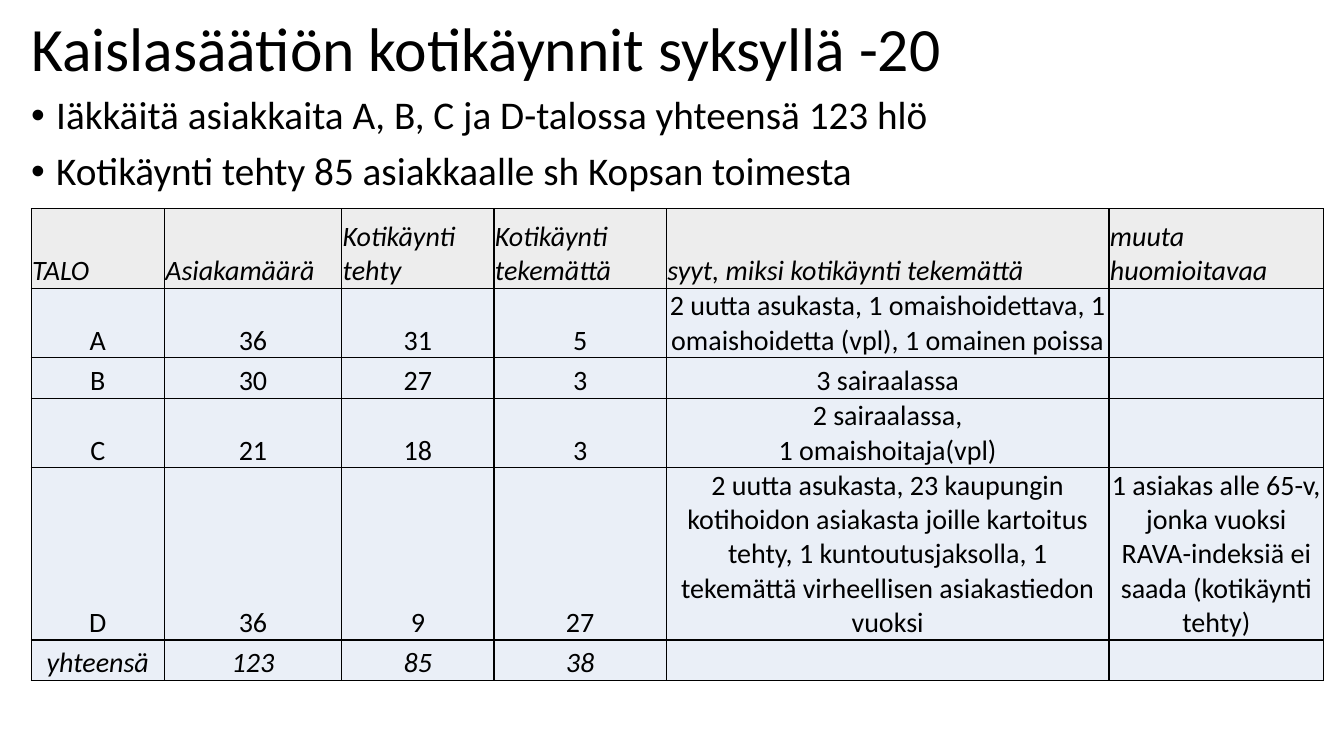
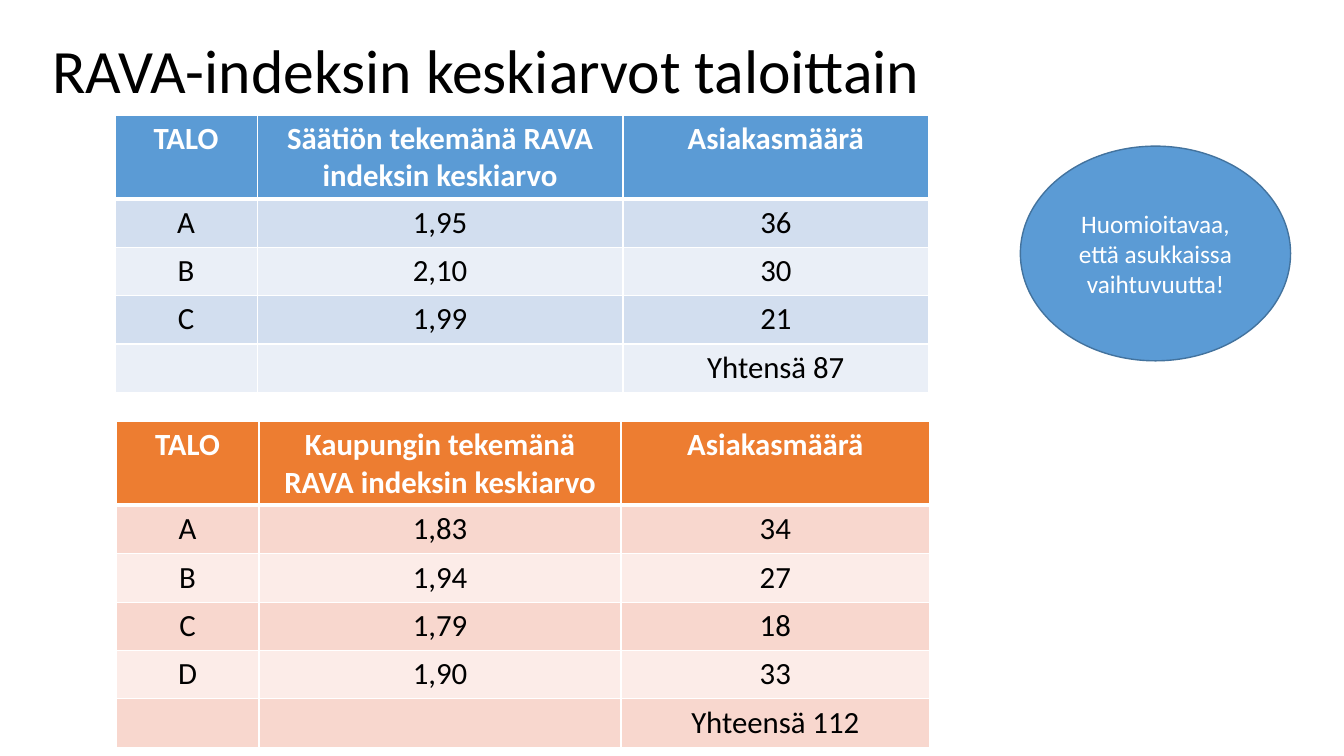
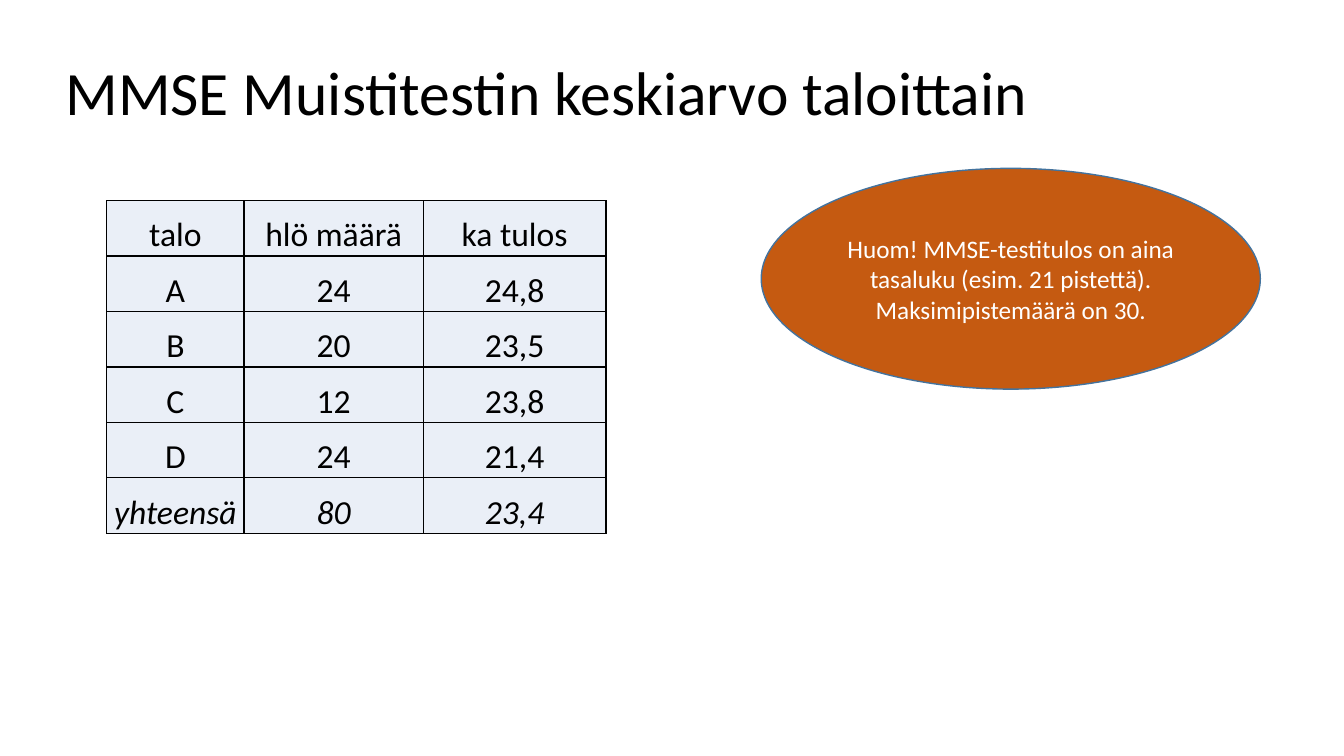
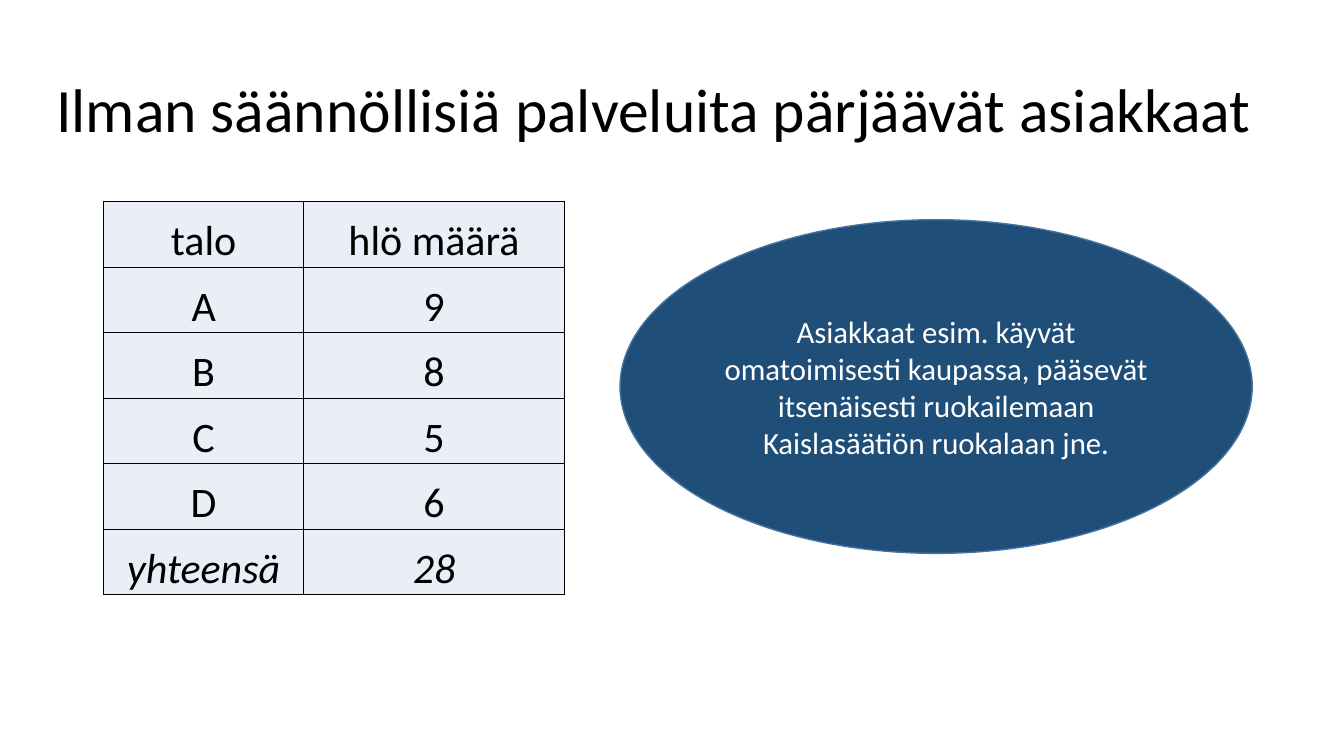
from lxml.etree import SubElement
from pptx import Presentation
from pptx.dml.color import RGBColor
from pptx.enum.shapes import MSO_SHAPE
from pptx.enum.text import MSO_ANCHOR, PP_ALIGN
from pptx.oxml import parse_xml
from pptx.oxml.ns import nsdecls, qn
from pptx.util import Inches, Pt

FONT = "Calibri"
BLACK, WHITE = "000000", "FFFFFF"
BLUE, PALE_BLUE, LIGHT_BLUE = "5B9BD5", "D2DEEF", "EAEFF7"
ORANGE, PALE_ORANGE, LIGHT_ORANGE = "ED7D31", "F8D7CE", "FCECE8"
RUST, NAVY, OUTLINE, GRAY = "C55A11", "1F4E79", "43739E", "EDEDED"


def rgb(value):
    """Turn a hex string into a colour."""
    return RGBColor.from_string(value)


def add_run(p, text, size, color=BLACK, bold=False, italic=False):
    """Add one formatted run to a paragraph."""
    r = p.add_run()
    r.text = text
    r.font.name = FONT
    r.font.size = Pt(size)
    r.font.color.rgb = rgb(color)
    r.font.bold = bold
    r.font.italic = italic


def add_textbox(s, box):
    """Add a wrapping text box and return its text frame."""
    tf = s.shapes.add_textbox(*map(Inches, box)).text_frame
    tf.word_wrap = True
    return tf


def add_title(s, text, left, top, width, height=1.45):
    """Add the slide title."""
    tf = add_textbox(s, (left, top, width, height))
    tf.vertical_anchor = MSO_ANCHOR.MIDDLE
    p = tf.paragraphs[0]
    p.line_spacing = 0.9
    add_run(p, text, 44)


def add_bullets(s, items, box):
    """Add a bulleted list."""
    tf = add_textbox(s, box)
    for i, item in enumerate(items):
        p = tf.add_paragraph() if i else tf.paragraphs[0]
        p.line_spacing = 0.9
        if i:
            p.space_before = Pt(10)
        pPr = p._p.get_or_add_pPr()
        pPr.set("marL", str(Inches(0.25)))
        pPr.set("indent", str(-Inches(0.25)))
        SubElement(pPr, qn("a:buFont"), typeface="Arial")
        SubElement(pPr, qn("a:buChar"), char="•")
        add_run(p, item, 28)


def add_ellipse(s, text, box, fill, size=18):
    """Add a filled ellipse holding a remark."""
    sp = s.shapes.add_shape(MSO_SHAPE.OVAL, *map(Inches, box))
    sp.shadow.inherit = False
    sp.fill.solid()
    sp.fill.fore_color.rgb = rgb(fill)
    sp.line.color.rgb = rgb(OUTLINE)
    sp.line.width = Pt(1)
    tf = sp.text_frame
    tf.word_wrap = True
    tf.vertical_anchor = MSO_ANCHOR.MIDDLE
    p = tf.paragraphs[0]
    p.alignment = PP_ALIGN.CENTER
    add_run(p, text, size, WHITE)


def set_borders(cell, color, bottom=1):
    """Draw the four borders of a cell."""
    tcPr = cell._tc.get_or_add_tcPr()
    widths = {"lnL": 1, "lnR": 1, "lnT": 1, "lnB": bottom}
    for i, (tag, width) in enumerate(widths.items()):
        tcPr.insert(i, parse_xml(
            f'<a:{tag} {nsdecls("a")} w="{Pt(width)}"><a:solidFill>'
            f'<a:srgbClr val="{color}"/></a:solidFill></a:{tag}>'))


def fill_cell(cell, text, fill, align=PP_ALIGN.CENTER, **font):
    """Set the fill and text of a cell, one paragraph a line."""
    cell.fill.solid()
    cell.fill.fore_color.rgb = rgb(fill)
    if not text:
        return
    tf = cell.text_frame
    for i, line in enumerate(text.split("\n")):
        p = tf.add_paragraph() if i else tf.paragraphs[0]
        p.alignment = align
        add_run(p, line, **font)


def add_grid(s, left, top, widths, heights):
    """Add an unstyled table with the given columns and rows."""
    sizes = map(Inches, (left, top, sum(widths), sum(heights)))
    table = s.shapes.add_table(len(heights), len(widths), *sizes).table
    table.first_row = table.horz_banding = False
    for col, width in zip(table.columns, widths):
        col.width = Inches(width)
    for row, height in zip(table.rows, heights):
        row.height = Inches(height)
    return table


def add_ruled_table(s, rows, left, top, widths, heights, size, has_header=False):
    """Add a black-ruled table whose last row is an italic total."""
    table = add_grid(s, left, top, widths, heights)
    for i, row in enumerate(rows):
        header = has_header and i == 0
        for j, text in enumerate(row):
            cell = table.cell(i, j)
            cell.margin_left = cell.margin_right = cell.margin_top = Inches(0.01)
            cell.margin_bottom = 0
            cell.vertical_anchor = MSO_ANCHOR.BOTTOM
            fill_cell(cell, text, GRAY if header else LIGHT_BLUE,
                      PP_ALIGN.LEFT if header else PP_ALIGN.CENTER,
                      size=size, italic=header or i == len(rows) - 1)
            set_borders(cell, BLACK)


def add_banded_table(s, rows, left, top, widths, head, bands):
    """Add a table with a coloured header and alternating bands."""
    heights = [0.82] + [0.48] * (len(rows) - 1)
    table = add_grid(s, left, top, widths, heights)
    for i, row in enumerate(rows):
        header = i == 0
        for j, text in enumerate(row):
            cell = table.cell(i, j)
            fill_cell(cell, text, head if header else bands[(i - 1) % 2],
                      size=22, color=WHITE if header else BLACK, bold=header)
            set_borders(cell, WHITE, 3 if header else 1)


def build_visits(s):
    """Build the slide on home visits."""
    add_title(s, "Kaislasäätiön kotikäynnit syksyllä -20", 0.21, 0, 12.97, 1.02)
    add_bullets(s, ["Iäkkäitä asiakkaita A, B, C ja D-talossa yhteensä 123 hlö",
                    "Kotikäynti tehty 85 asiakkaalle sh Kopsan toimesta"],
                (0.21, 0.9, 12.04, 1.15))
    rows = [
        ("TALO", "Asiakamäärä", "Kotikäynti tehty", "Kotikäynti tekemättä",
         "syyt, miksi kotikäynti tekemättä", "muuta huomioitavaa"),
        ("A", "36", "31", "5", "2 uutta asukasta, 1 omaishoidettava, "
         "1 omaishoidetta (vpl), 1 omainen poissa", ""),
        ("B", "30", "27", "3", "3 sairaalassa", ""),
        ("C", "21", "18", "3", "2 sairaalassa,\n1 omaishoitaja(vpl)", ""),
        ("D", "36", "9", "27", "2 uutta asukasta, 23 kaupungin kotihoidon "
         "asiakasta joille kartoitus tehty, 1 kuntoutusjaksolla, "
         "1 tekemättä virheellisen asiakastiedon vuoksi",
         "1 asiakas alle 65-v, jonka vuoksi RAVA-indeksiä ei saada "
         "(kotikäynti tehty)"),
        ("yhteensä", "123", "85", "38", "", ""),
    ]
    add_ruled_table(s, rows, 0.31, 2.07, [1.32, 1.76, 1.51, 1.71, 4.39, 2.13],
                    [0.79, 0.69, 0.4, 0.69, 1.71, 0.4], 20, has_header=True)


def build_rava(s):
    """Build the slide on RAVA index averages."""
    add_title(s, "RAVA-indeksin keskiarvot taloittain", 0.42, 0, 11.5)
    foundation = [("TALO", "Säätiön tekemänä RAVA indeksin keskiarvo", "Asiakasmäärä"),
                  ("A", "1,95", "36"), ("B", "2,10", "30"), ("C", "1,99", "21"),
                  ("", "", "Yhtensä 87")]
    city = [("TALO", "Kaupungin tekemänä RAVA indeksin keskiarvo", "Asiakasmäärä"),
            ("A", "1,83", "34"), ("B", "1,94", "27"), ("C", "1,79", "18"),
            ("D", "1,90", "33"), ("", "", "Yhteensä 112")]
    add_banded_table(s, foundation, 1.14, 1.14, [1.41, 3.63, 3.03],
                     BLUE, (PALE_BLUE, LIGHT_BLUE))
    add_banded_table(s, city, 1.15, 4.18, [1.42, 3.59, 3.06],
                     ORANGE, (PALE_ORANGE, LIGHT_ORANGE))
    add_ellipse(s, "Huomioitavaa, että asukkaissa vaihtuvuutta!",
                (10.12, 1.45, 2.68, 2.13), BLUE)


def build_mmse(s):
    """Build the slide on memory test averages."""
    add_title(s, "MMSE Muistitestin keskiarvo taloittain", 0.55, 0.22, 11.5)
    rows = [("talo", "hlö määrä", "ka tulos"), ("A", "24", "24,8"),
            ("B", "20", "23,5"), ("C", "12", "23,8"), ("D", "24", "21,4"),
            ("yhteensä", "80", "23,4")]
    add_ruled_table(s, rows, 1.06, 1.99, [1.36, 1.78, 1.81], [0.55] * 6, 24)
    add_ellipse(s, "Huom! MMSE-testitulos on aina tasaluku (esim. 21 pistettä). "
                "Maksimipistemäärä on 30.", (7.55, 1.67, 4.95, 2.19), RUST)


def build_independent(s):
    """Build the slide on clients without regular services."""
    add_title(s, "Ilman säännöllisiä palveluita pärjäävät asiakkaat", 0.46, 0.39, 12.46)
    rows = [("talo", "hlö määrä"), ("A", "9"), ("B", "8"), ("C", "5"),
            ("D", "6"), ("yhteensä", "28")]
    add_ruled_table(s, rows, 1.03, 2, [1.98, 2.59], [0.65] * 6, 30)
    add_ellipse(s, "Asiakkaat esim. käyvät omatoimisesti kaupassa, pääsevät "
                "itsenäisesti ruokailemaan Kaislasäätiön ruokalaan jne.",
                (6.15, 2.18, 6.27, 3.31), NAVY, 22)


def main():
    """Build and save the presentation."""
    prs = Presentation()
    prs.slide_width, prs.slide_height = Inches(13.33), Inches(7.5)
    for build in (build_visits, build_rava, build_mmse, build_independent):
        build(prs.slides.add_slide(prs.slide_layouts[6]))
    prs.save("out.pptx")


if __name__ == "__main__":
    main()
